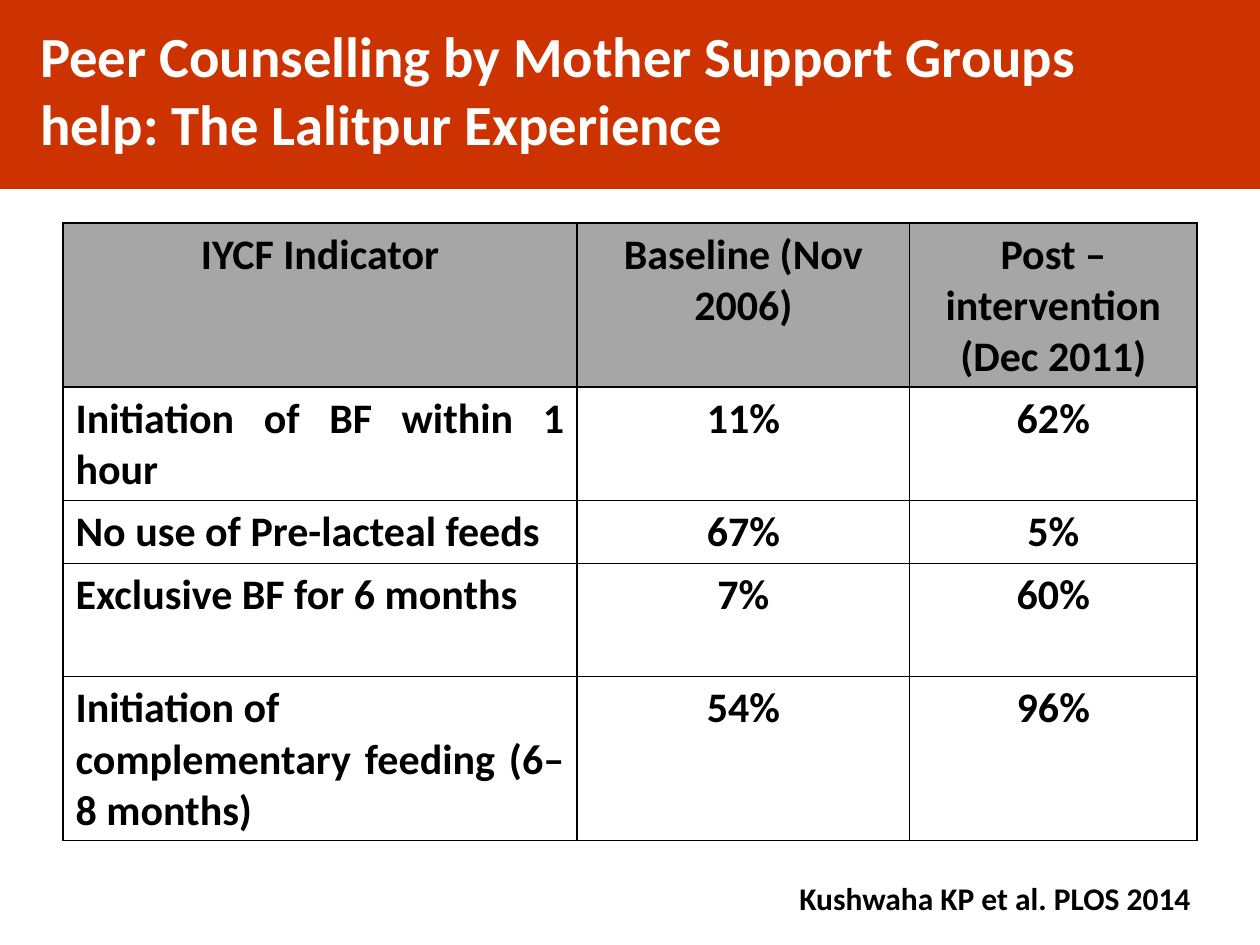
from lxml import etree
from pptx import Presentation
from pptx.dml.color import RGBColor
from pptx.enum.shapes import MSO_SHAPE
from pptx.enum.text import MSO_ANCHOR, PP_ALIGN
from pptx.oxml.ns import qn
from pptx.util import Inches, Pt

RECTANGLE = MSO_SHAPE.RECTANGLE
TOP, MIDDLE = MSO_ANCHOR.TOP, MSO_ANCHOR.MIDDLE
LEFT, CENTER, RIGHT = PP_ALIGN.LEFT, PP_ALIGN.CENTER, PP_ALIGN.RIGHT
JUSTIFY = PP_ALIGN.JUSTIFY

FONT = "Calibri"
COLORS = {"banner": "CC3300", "header": "A6A6A6", "ink": "000000", "white": "FFFFFF"}
WIDTH, HEIGHT = Inches(10), Inches(7.5)

INDICATORS = [
    ("IYCF Indicator", "Baseline (Nov 2006)", "Post – intervention (Dec 2011)"),
    ("Initiation of BF within 1 hour", "11%", "62%"),
    ("No use of Pre-lacteal feeds", "67%", "5%"),
    ("Exclusive BF for 6 months", "7%", "60%"),
    ("Initiation of\ncomplementary feeding (6–8 months)", "54%", "96%"),
]
COLUMN_WEIGHTS = (4.08, 2.64, 2.28)
ROW_WEIGHTS = (1.3, 0.9, 0.5, 0.9, 1.3)


def color(name):
    return RGBColor.from_string(COLORS[name])


def share_box(left, top, width, height):
    """Turn shares of the slide into a box in EMU."""
    return (int(left * WIDTH), int(top * HEIGHT), int(width * WIDTH), int(height * HEIGHT))


def write(frame, text, size=24, ink="ink", align=LEFT, anchor=TOP):
    frame.word_wrap = True
    frame.vertical_anchor = anchor
    frame.text = text
    for paragraph in frame.paragraphs:
        paragraph.alignment = align
        for run in paragraph.runs:
            run.font.name = FONT
            run.font.size = Pt(size)
            run.font.bold = True
            run.font.color.rgb = color(ink)


def add_borders(cell, width=Pt(1)):
    properties = cell._tc.get_or_add_tcPr()
    for index, side in enumerate(("lnL", "lnR", "lnT", "lnB")):
        line = etree.Element(qn(f"a:{side}"), w=str(int(width)))
        fill = etree.SubElement(line, qn("a:solidFill"))
        etree.SubElement(fill, qn("a:srgbClr"), val=COLORS["ink"])
        properties.insert(index, line)


def add_banner(slide, box):
    left, top, width, height = box
    banner = slide.shapes.add_shape(RECTANGLE, *box)
    banner.shadow.inherit = False
    banner.fill.solid()
    banner.fill.fore_color.rgb = color("banner")
    banner.line.fill.background()

    # Title, inset within the banner
    title = slide.shapes.add_textbox(
        left + int(0.022 * width), top + int(0.053 * height),
        int(0.853 * width), int(0.833 * height))
    write(title.text_frame,
          "Peer Counselling by Mother Support Groups help: The Lalitpur Experience",
          size=32.4, ink="white", anchor=MIDDLE)


def add_indicator_table(slide, box):
    width, height = box[2:]
    table = slide.shapes.add_table(len(INDICATORS), len(COLUMN_WEIGHTS), *box).table
    for column, weight in zip(table.columns, COLUMN_WEIGHTS):
        column.width = int(width * weight / sum(COLUMN_WEIGHTS))
    for row, weight in zip(table.rows, ROW_WEIGHTS):
        row.height = int(height * weight / sum(ROW_WEIGHTS))

    for r, indicator in enumerate(INDICATORS):
        for c, text in enumerate(indicator):
            cell = table.cell(r, c)
            write(cell.text_frame, text, align=JUSTIFY if r and c == 0 else CENTER)
            if r == 0:
                cell.fill.solid()
                cell.fill.fore_color.rgb = color("header")
            else:
                cell.fill.background()
            add_borders(cell)


def add_citation(slide, box):
    citation = slide.shapes.add_textbox(*box)
    write(citation.text_frame, "Kushwaha KP et al. PLOS 2014", size=18, align=RIGHT)


def main():
    deck = Presentation()
    deck.slide_width, deck.slide_height = WIDTH, HEIGHT
    slide = deck.slides.add_slide(deck.slide_layouts[6])
    add_banner(slide, share_box(0, 0, 1, 0.2))
    add_indicator_table(slide, share_box(0.05, 0.236, 0.9, 0.653))
    add_citation(slide, share_box(0.153, 0.924, 0.802, 0.053))
    deck.save("out.pptx")


if __name__ == "__main__":
    main()
